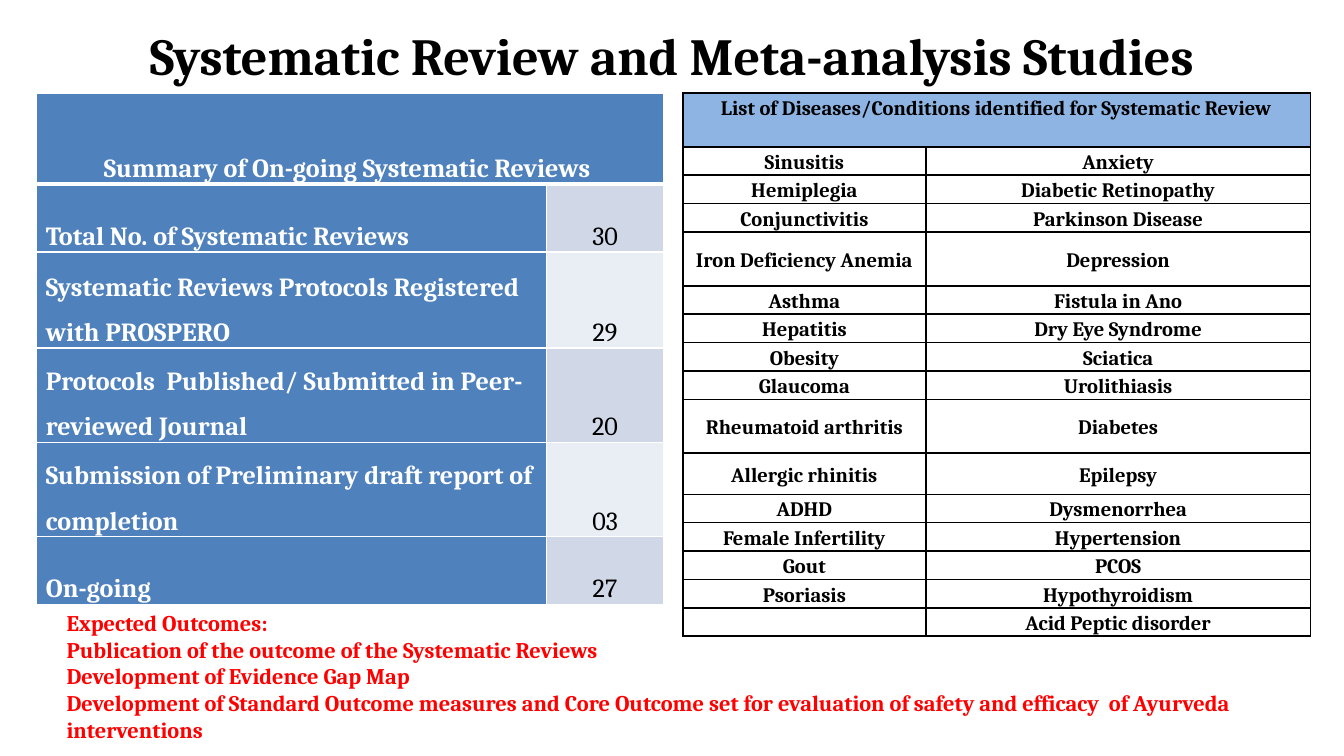
from lxml import etree
from pptx import Presentation
from pptx.dml.color import RGBColor
from pptx.enum.text import MSO_ANCHOR, PP_ALIGN
from pptx.oxml.ns import qn
from pptx.util import Pt

LEFT, CENTER = PP_ALIGN.LEFT, PP_ALIGN.CENTER
TOP, MIDDLE, BOTTOM = MSO_ANCHOR.TOP, MSO_ANCHOR.MIDDLE, MSO_ANCHOR.BOTTOM

FONT = "Cambria"
BLACK = RGBColor(0x00, 0x00, 0x00)
WHITE = RGBColor(0xFF, 0xFF, 0xFF)
RED = RGBColor(0xFF, 0x00, 0x00)
BLUE = RGBColor(0x4F, 0x81, 0xBD)
SKY = RGBColor(0x8D, 0xB4, 0xE3)
BANDS = RGBColor(0xD0, 0xD8, 0xE8), RGBColor(0xE9, 0xED, 0xF4)

COUNTS = [
    ("Total No. of Systematic Reviews", "30"),
    ("Systematic Reviews Protocols Registered with PROSPERO", "29"),
    ("Protocols  Published/ Submitted in Peer-reviewed Journal", "20"),
    ("Submission of Preliminary draft report of completion", "03"),
    ("On-going", "27"),
]
DISEASES = [
    ("Sinusitis", "Anxiety"),
    ("Hemiplegia", "Diabetic Retinopathy"),
    ("Conjunctivitis", "Parkinson Disease"),
    ("Iron Deficiency Anemia", "Depression"),
    ("Asthma", "Fistula in Ano"),
    ("Hepatitis", "Dry Eye Syndrome"),
    ("Obesity", "Sciatica"),
    ("Glaucoma", "Urolithiasis"),
    ("Rheumatoid arthritis", "Diabetes"),
    ("Allergic rhinitis", "Epilepsy"),
    ("ADHD", "Dysmenorrhea"),
    ("Female Infertility", "Hypertension"),
    ("Gout", "PCOS"),
    ("Psoriasis", "Hypothyroidism"),
    ("", "Acid Peptic disorder"),
]
TALL = {"Iron Deficiency Anemia": 28.9, "Rheumatoid arthritis": 28.9,
        "Allergic rhinitis": 22}
GOALS = [
    "Expected Outcomes:",
    "Publication of the outcome of the Systematic Reviews",
    "Development of Evidence Gap Map",
    "Development of Standard Outcome measures and Core Outcome set for "
    "evaluation of safety and efficacy  of Ayurveda interventions",
]


def write(para, text, size=14, color=BLACK, bold=True, align=LEFT, gap=None):
    para.alignment = align
    if gap:
        para.line_spacing = gap
    if not text:
        # An empty cell keeps the height of its font
        etree.SubElement(para._p, qn("a:endParaRPr"), sz=str(size * 100))
        return
    run = para.add_run()
    run.text = text
    font = run.font
    font.name, font.size, font.bold = FONT, Pt(size), bold
    font.color.rgb = color


def add_box(slide, box, anchor):
    frame = slide.shapes.add_textbox(*map(Pt, box)).text_frame
    frame.word_wrap = True
    frame.vertical_anchor = anchor
    return frame


def edge(cell, color, base=1):
    props = cell._tc.get_or_add_tcPr()
    widths = {"L": 1, "R": 1, "T": 1, "B": base}
    for spot, (side, width) in enumerate(widths.items()):
        line = etree.Element(qn("a:ln" + side), w=str(Pt(width)))
        fill = etree.SubElement(line, qn("a:solidFill"))
        etree.SubElement(fill, qn("a:srgbClr"), val=str(color))
        props.insert(spot, line)


def fill_cell(cell, text, fill, line, anchor, base=1, **style):
    cell.fill.solid()
    cell.fill.fore_color.rgb = fill
    cell.vertical_anchor = anchor
    cell.margin_left = cell.margin_right = Pt(5)
    cell.margin_top = cell.margin_bottom = 0
    write(cell.text_frame.paragraphs[0], text, **style)
    edge(cell, line, base)


def add_grid(slide, box, cols, rows):
    left, top, width = box
    grid = slide.shapes.add_table(len(rows), len(cols), Pt(left), Pt(top),
                                  Pt(width), Pt(sum(rows))).table
    for col, size in zip(grid.columns, cols):
        col.width = Pt(size)
    for row, size in zip(grid.rows, rows):
        row.height = Pt(size)
    grid.cell(0, 0).merge(grid.cell(0, len(cols) - 1))
    return grid


def add_title(slide, box):
    frame = add_box(slide, box, MIDDLE)
    write(frame.paragraphs[0], "Systematic Review and Meta-analysis Studies",
          size=27.9, align=CENTER)


def add_summary(slide, box):
    value = 62.8
    rows = [48.8, 36.4, 51.6, 48.8, 48.8, 36.4]
    grid = add_grid(slide, box, [box[2] - value, value], rows)
    # Header, with a heavy rule below
    for col, text in enumerate(["Summary of On-going Systematic Reviews ", ""]):
        fill_cell(grid.cell(0, col), text, BLUE, WHITE, BOTTOM, base=3,
                  color=WHITE, align=CENTER, gap=1.5)
    # Labels and counts
    for row, (label, count) in enumerate(COUNTS, 1):
        fill_cell(grid.cell(row, 0), label, BLUE, WHITE, BOTTOM, color=WHITE,
                  gap=1.0 if label == "On-going" else 1.5)
        fill_cell(grid.cell(row, 1), count, BANDS[(row - 1) % 2], WHITE,
                  BOTTOM, bold=False, align=CENTER, gap=1.5)


def add_diseases(slide, box):
    first = 130.3
    rows = [28.9] + [TALL.get(name, 14.6) for name, _ in DISEASES]
    grid = add_grid(slide, box, [first, box[2] - first], rows)
    head = "List of Diseases/Conditions identified for Systematic Review"
    for row, pair in enumerate([(head, "")] + DISEASES):
        fill, anchor = (WHITE, MIDDLE) if row else (SKY, TOP)
        for col, text in enumerate(pair):
            fill_cell(grid.cell(row, col), text, fill, BLACK, anchor,
                      size=11, align=CENTER, gap=1.15)


def add_goals(slide, box):
    frame = add_box(slide, box, TOP)
    for spot, goal in enumerate(GOALS):
        para = frame.add_paragraph() if spot else frame.paragraphs[0]
        write(para, goal, size=12, color=RED)


def main():
    deck = Presentation()
    deck.slide_width, deck.slide_height = Pt(720), Pt(405)
    slide = deck.slides.add_slide(deck.slide_layouts[6])
    add_title(slide, (36, 7, 648, 45))
    add_summary(slide, (19.6, 49.8, 336))
    add_diseases(slide, (365.8, 49.8, 336.2))
    add_goals(slide, (28.6, 322.6, 673, 80))
    deck.save("out.pptx")


if __name__ == "__main__":
    main()
